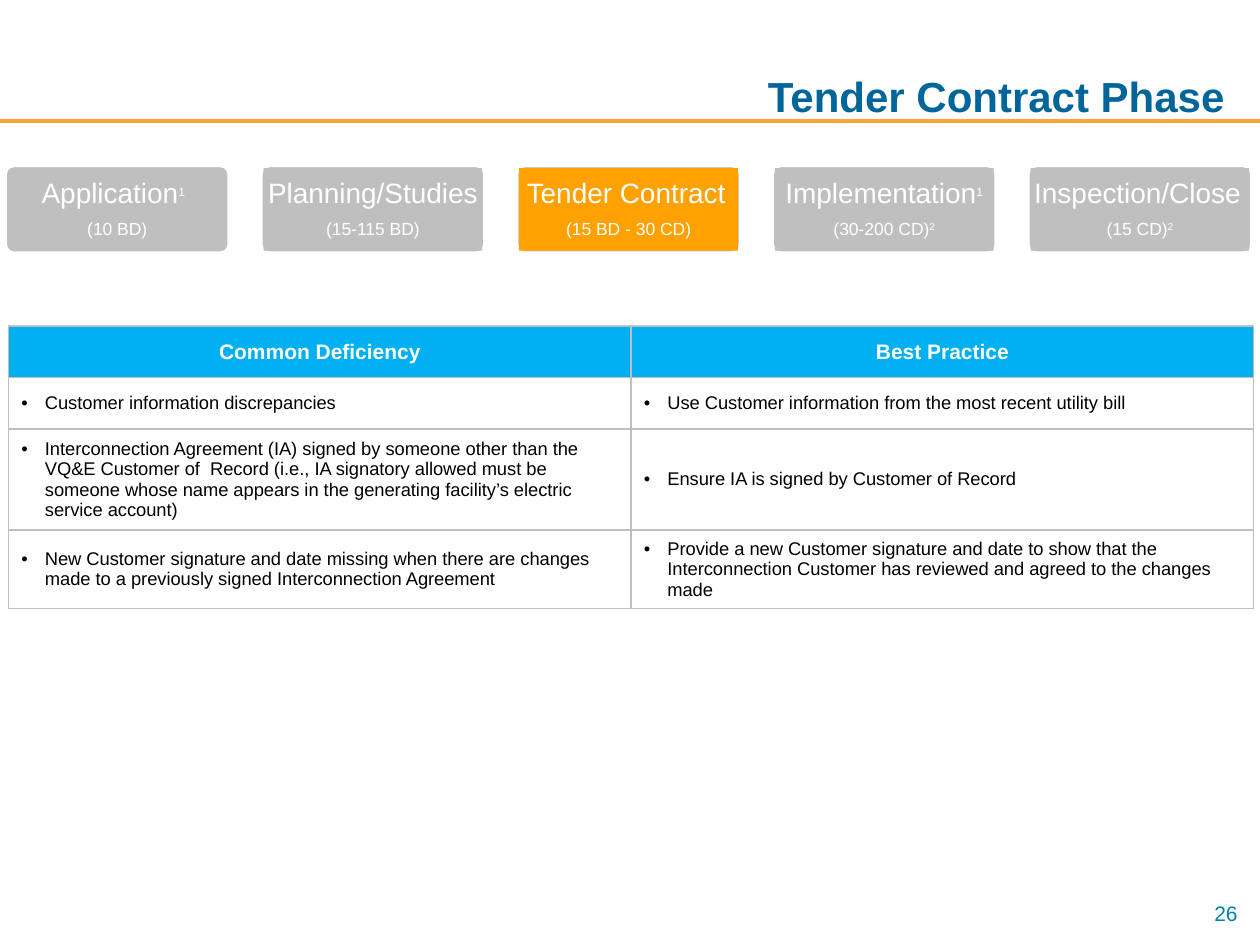
from dataclasses import dataclass

from lxml.etree import SubElement
from pptx import Presentation
from pptx.dml.color import RGBColor
from pptx.enum.shapes import MSO_CONNECTOR, MSO_SHAPE
from pptx.enum.text import MSO_ANCHOR, MSO_AUTO_SIZE, PP_ALIGN
from pptx.oxml.ns import qn
from pptx.util import Pt

HUES = {
    "rule": "FAA534",
    "title": "006699",
    "page": "0082AA",
    "head": "00B0F0",
    "grey": "BFBFBF",
    "now": "FFA100",
    "white": "FFFFFF",
    "black": "000000",
}


@dataclass
class Bit:
    text: str
    size: float
    high: bool = False


@dataclass
class Step:
    name: list[Bit]
    span: list[Bit]
    hue: str = "grey"


STEPS = [
    Step([Bit("Application", 16), Bit("1", 12, True), Bit(" ", 16)],
         [Bit("(10 BD)", 10)]),
    Step([Bit("Planning/Studies", 16)], [Bit("(15-115 BD)", 10)]),
    Step([Bit("Tender Contract", 16), Bit(" ", 10)],
         [Bit("(15 BD - 30 CD)", 10)], "now"),
    Step([Bit("Implementation", 16), Bit("1", 12, True)],
         [Bit("(30-200 CD)", 10), Bit("2", 10, True)]),
    Step([Bit("Inspection/Close", 16), Bit(" ", 10)],
         [Bit("(15 CD)", 10), Bit("2", 10, True)]),
]

ROWS = [
    ("Common Deficiency", "Best Practice"),
    ("Customer information discrepancies",
     "Use Customer information from the most recent utility bill"),
    ("Interconnection Agreement (IA) signed by someone other than the "
     "VQ&E Customer of  Record (i.e., IA signatory allowed must be someone "
     "whose name appears in the generating facility’s electric service account)",
     "Ensure IA is signed by Customer of Record"),
    ("New Customer signature and date missing when there are changes made "
     "to a previously signed Interconnection Agreement",
     "Provide a new Customer signature and date to show that the "
     "Interconnection Customer has reviewed and agreed to the changes made"),
]


def tint(name: str) -> RGBColor:
    return RGBColor.from_string(HUES[name])


def write(para, bit: Bit, hue: str, bold: bool = False) -> None:
    run = para.add_run()
    run.text = bit.text
    font = run.font
    font.name, font.size, font.bold = "Arial", Pt(bit.size), bold
    font.color.rgb = tint(hue)
    if bit.high:
        run._r.get_or_add_rPr().set("baseline", "30000")


def draw_rule(slide) -> None:
    line = slide.shapes.add_connector(
        MSO_CONNECTOR.STRAIGHT, Pt(0), Pt(69.1), Pt(720), Pt(69.1))
    line.line.color.rgb = tint("rule")
    line.line.width = Pt(2)
    SubElement(line._element.spPr, qn("a:effectLst"))


def draw_title(slide) -> None:
    title = slide.shapes.title
    title.left, title.top = Pt(99.4), Pt(23.8)
    title.width, title.height = Pt(614.2), Pt(49)
    frame = title.text_frame
    frame.auto_size = MSO_AUTO_SIZE.NONE
    frame.vertical_anchor = MSO_ANCHOR.BOTTOM
    para = frame.paragraphs[0]
    para.alignment = PP_ALIGN.RIGHT
    write(para, Bit("Tender Contract Phase ", 24), "title", True)


def draw_page(slide) -> None:
    box = slide.shapes.add_textbox(Pt(546.5), Pt(511.2), Pt(167.8), Pt(28.8))
    box.text_frame.word_wrap = True
    para = box.text_frame.paragraphs[0]
    para.alignment = PP_ALIGN.RIGHT
    write(para, Bit("26", 12), "page")


def draw_step(slide, step: Step, left: float) -> None:
    group = slide.shapes.add_group_shape()
    card = group.shapes.add_shape(
        MSO_SHAPE.ROUNDED_RECTANGLE, Pt(left), Pt(94.5), Pt(128), Pt(50.2))
    card.adjustments[0] = 0.1
    card.line.color.rgb = tint("white")
    card.line.width = Pt(2)
    label = group.shapes.add_shape(
        MSO_SHAPE.RECTANGLE, Pt(left + 1.5), Pt(96), Pt(125), Pt(47.2))
    label.line.fill.background()
    for shape, hue in ((card, "grey"), (label, step.hue)):
        shape.shadow.inherit = False
        shape.fill.solid()
        shape.fill.fore_color.rgb = tint(hue)
    if step is STEPS[0]:
        label.fill.background()
    frame = label.text_frame
    frame.word_wrap = True
    frame.vertical_anchor = MSO_ANCHOR.MIDDLE
    frame.margin_left = frame.margin_right = Pt(1.5)
    frame.margin_top = frame.margin_bottom = Pt(1.5)
    for para, bits in ((frame.paragraphs[0], step.name),
                       (frame.add_paragraph(), step.span)):
        para.alignment = PP_ALIGN.CENTER
        para.line_spacing = 0.9
        para.space_after = Pt(bits[0].size * 0.4)
        for bit in bits:
            write(para, bit, "white")


def edge(cell) -> None:
    props = cell._tc.get_or_add_tcPr()
    for side in ("lnL", "lnR", "lnT", "lnB"):
        line = SubElement(props, qn(f"a:{side}"), w=str(Pt(1)))
        fill = SubElement(line, qn("a:solidFill"))
        SubElement(fill, qn("a:srgbClr"), val=HUES["grey"])


def fill_cell(cell, text: str, head: bool) -> None:
    edge(cell)
    cell.fill.solid()
    cell.fill.fore_color.rgb = tint("head" if head else "white")
    cell.vertical_anchor = MSO_ANCHOR.MIDDLE
    para = cell.text_frame.paragraphs[0]
    if head:
        para.alignment = PP_ALIGN.CENTER
        write(para, Bit(text, 12), "white", True)
        return
    props = para._p.get_or_add_pPr()
    props.set("marL", str(Pt(13.5)))
    props.set("indent", str(-Pt(13.5)))
    SubElement(props, qn("a:buFont"), typeface="Arial")
    SubElement(props, qn("a:buChar"), char="•")
    write(para, Bit(text, 10.5), "black")


def draw_table(slide) -> None:
    table = slide.shapes.add_table(
        len(ROWS), 2, Pt(5), Pt(186.3), Pt(711.4), Pt(118)).table
    for row in table.rows:
        row.height = Pt(29.5)
    for i, texts in enumerate(ROWS):
        for j, text in enumerate(texts):
            fill_cell(table.cell(i, j), text, i == 0)


def main() -> None:
    deck = Presentation()
    deck.slide_width, deck.slide_height = Pt(720), Pt(540)
    slide = deck.slides.add_slide(deck.slide_layouts[5])
    draw_rule(slide)
    draw_title(slide)
    draw_page(slide)
    draw_table(slide)
    for i, step in enumerate(STEPS):
        draw_step(slide, step, 3 + 146.1 * i)
    deck.save("out.pptx")


if __name__ == "__main__":
    main()
